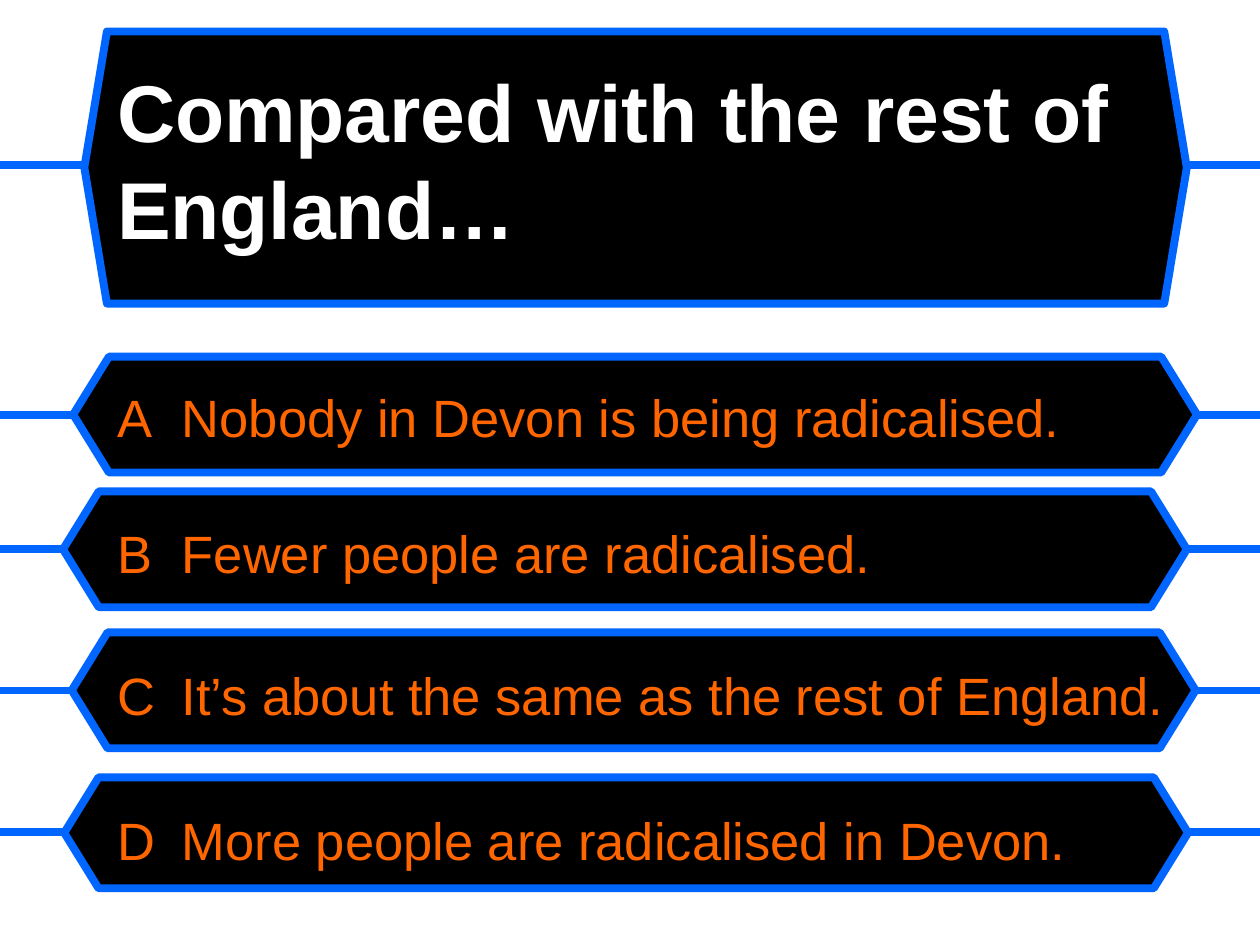
from pptx import Presentation
from pptx.dml.color import RGBColor
from pptx.enum.shapes import MSO_CONNECTOR, MSO_SHAPE
from pptx.enum.text import MSO_ANCHOR
from pptx.oxml.ns import qn
from pptx.util import Pt
from lxml import etree

HEXAGON = MSO_SHAPE.HEXAGON
STRAIGHT = MSO_CONNECTOR.STRAIGHT
TOP, MIDDLE = MSO_ANCHOR.TOP, MSO_ANCHOR.MIDDLE
SLIDE_W, SLIDE_H = 720, 540
BLACK, BLUE, ORANGE, WHITE = "000000", "0066FF", "FF6600", "FFFFFF"
TITLE_FORMAT = {"name": "Arial", "size": Pt(46), "bold": True}
ANSWER_FORMAT = {"name": "Arial", "size": Pt(30), "bold": False}
HANGING = 37

QUESTION_PANEL = (48.2, 18, 630, 155.5, 0.083, 94.3)
ANSWER_PANELS = [
    (41.8, 203.8, 642.2, 66.2, 0.309, 236.9),
    (36, 280.8, 642.2, 66.2, 0.309, 313.9),
    (41, 361.4, 642.2, 66.2, 0.309, 394.6),
    (36.7, 444.2, 642.2, 63.4, 0.309, 475.6),
]
ANSWERS = [
    ("A", "Nobody in Devon is being radicalised.", 0),
    ("B", "Fewer people are radicalised.", 41.5),
    ("C", "It’s about the same as the rest of England.", 45.5),
    ("D", "More people are radicalised in Devon.", 46.5),
]


def rgb(value):
    """Turn a hex string into a colour."""
    return RGBColor.from_string(value)


def add_wire(s, x1, x2, y):
    """Draw a level blue wire without a shadow."""
    wire = s.shapes.add_connector(STRAIGHT, Pt(x1), Pt(y), Pt(x2), Pt(y))
    wire.line.color.rgb = rgb(BLUE)
    wire.line.width = Pt(4.5)
    etree.SubElement(wire._element.spPr, qn("a:effectLst"))


def add_panel(s, left, top, width, height, slant, wire_y):
    """Draw a black hexagon with a wire to each slide edge."""
    sp = s.shapes.add_shape(HEXAGON, Pt(left), Pt(top), Pt(width), Pt(height))
    sp.adjustments[0] = slant
    sp.adjustments[1] = 1.155
    sp.shadow.inherit = False
    sp.fill.solid()
    sp.fill.fore_color.rgb = rgb(BLACK)
    sp.line.color.rgb = rgb(BLUE)
    sp.line.width = Pt(4.5)
    add_wire(s, 0, left, wire_y)
    add_wire(s, left + width, SLIDE_W, wire_y)


def add_text_frame(s, left, top, width, height, anchor):
    """Add a wrapping text box and return its frame."""
    tf = s.shapes.add_textbox(Pt(left), Pt(top), Pt(width), Pt(height)).text_frame
    tf.word_wrap = True
    tf.vertical_anchor = anchor
    return tf


def add_run(p, text, color, formats):
    """Add a run with the given colour and font values."""
    r = p.add_run()
    r.text = text
    r.font.color.rgb = rgb(color)
    for name, value in formats.items():
        setattr(r.font, name, value)


def add_answers(s):
    """Add the lettered answers as hanging paragraphs."""
    tf = add_text_frame(s, 59.8, 216.6, 655, 300, TOP)
    for i, (letter, answer, gap) in enumerate(ANSWERS):
        p = tf.add_paragraph() if i else tf.paragraphs[0]
        p.space_before = Pt(gap)
        pPr = p._p.get_or_add_pPr()
        pPr.set("marL", str(Pt(HANGING)))
        pPr.set("indent", str(Pt(-HANGING)))
        add_run(p, f"{letter}\t{answer}", ORANGE, ANSWER_FORMAT)


def main():
    """Build and save the quiz slide."""
    prs = Presentation()
    prs.slide_width, prs.slide_height = Pt(SLIDE_W), Pt(SLIDE_H)
    s = prs.slides.add_slide(prs.slide_layouts[6])
    for panel in [*ANSWER_PANELS, QUESTION_PANEL]:
        add_panel(s, *panel)
    tf = add_text_frame(s, 59.8, 30.2, 589, 121, MIDDLE)
    add_run(tf.paragraphs[0], "Compared with the rest of England…", WHITE, TITLE_FORMAT)
    add_answers(s)
    prs.save("out.pptx")


if __name__ == "__main__":
    main()
